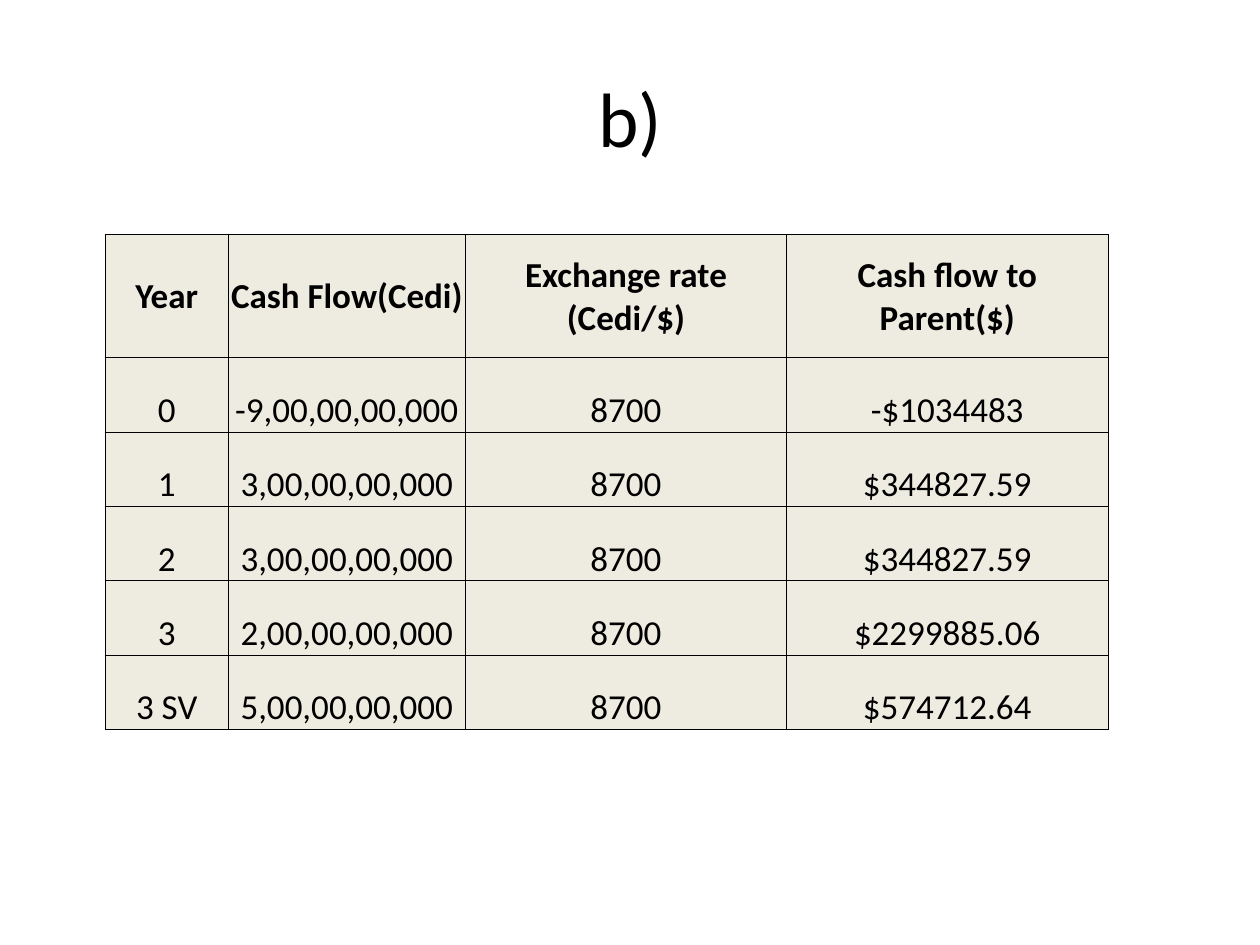
from lxml.etree import SubElement
from pptx import Presentation
from pptx.dml.color import RGBColor
from pptx.enum.text import MSO_ANCHOR, PP_ALIGN
from pptx.oxml.ns import qn
from pptx.util import Inches, Pt

WIDE, HIGH = 10, 7.5
FONT, INK, PAPER = "Calibri", "000000", "EEECE1"
COLS = [0.98, 1.88, 2.55, 2.55]
ROWS = [0.98] + [0.59] * 5
RATE = "8700"
HEAD = ["Year", "Cash Flow(Cedi) ", "Exchange rate\n(Cedi/$)", "Cash flow to Parent($)"]
FLOWS = [
    ("0", "-9,00,00,00,000", "-$1034483"),
    ("1", "3,00,00,00,000", "$344827.59"),
    ("2", "3,00,00,00,000", "$344827.59"),
    ("3", "2,00,00,00,000", "$2299885.06"),
    ("3 SV", "5,00,00,00,000", "$574712.64"),
]


def color(code):
    return RGBColor.from_string(code)


def write(frame, text, size, bold=False):
    frame.text = text
    for para in frame.paragraphs:
        para.alignment = PP_ALIGN.CENTER
        for run in para.runs:
            font = run.font
            font.name, font.size, font.bold = FONT, Pt(size), bold
            font.color.rgb = color(INK)


def border(cell):
    props = cell._tc.get_or_add_tcPr()
    for side in ("a:lnL", "a:lnR", "a:lnT", "a:lnB"):
        line = SubElement(props, qn(side), w=str(Pt(0.5)))
        fill = SubElement(line, qn("a:solidFill"))
        SubElement(fill, qn("a:srgbClr"), val=INK)


def add_title(slide, box, text):
    frame = slide.shapes.add_textbox(*map(Inches, box)).text_frame
    frame.word_wrap = True
    frame.vertical_anchor = MSO_ANCHOR.MIDDLE
    write(frame, text, 44)


def add_flows(slide, box):
    """Fill the box with the cash flow table, in the shares of COLS and ROWS."""
    left, top, wide, high = map(Inches, box)
    data = [HEAD] + [(year, cedi, RATE, usd) for year, cedi, usd in FLOWS]
    table = slide.shapes.add_table(len(ROWS), len(COLS), left, top, wide, high).table
    for col, part in zip(table.columns, COLS):
        col.width = int(wide * part / sum(COLS))
    for row, part, texts in zip(table.rows, ROWS, data):
        row.height = int(high * part / sum(ROWS))
        top_row = texts is HEAD
        for cell, text in zip(row.cells, texts):
            border(cell)
            cell.fill.solid()
            cell.fill.fore_color.rgb = color(PAPER)
            cell.margin_left = cell.margin_right = cell.margin_top = Inches(0.01)
            cell.margin_bottom = 0
            cell.vertical_anchor = MSO_ANCHOR.MIDDLE if top_row else MSO_ANCHOR.BOTTOM
            write(cell.text_frame, text, 20, top_row)


def main():
    deck = Presentation()
    deck.slide_width, deck.slide_height = Inches(WIDE), Inches(HIGH)
    slide = deck.slides.add_slide(deck.slide_layouts[6])
    add_title(slide, (0.05 * WIDE, 0.04 * HIGH, 0.9 * WIDE, HIGH / 6), "b)")
    add_flows(slide, (WIDE / 12, 1.86, sum(COLS), sum(ROWS)))
    deck.save("out.pptx")


if __name__ == "__main__":
    main()
